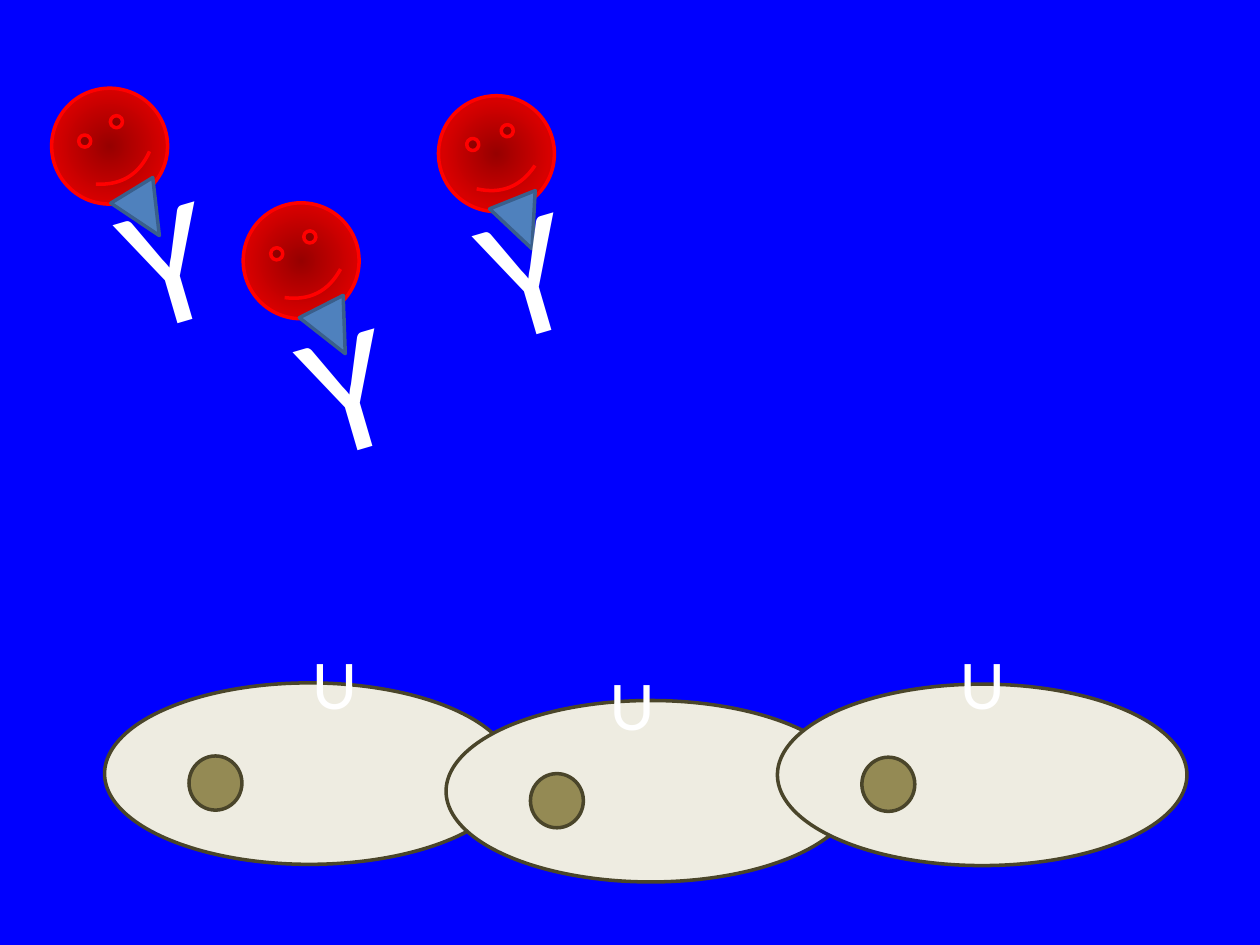
import pptx
import pptx.dml.color
import pptx.enum.shapes
import pptx.enum.text
import pptx.oxml
import pptx.oxml.ns
import pptx.util

Inches = pptx.util.Inches
RGBColor = pptx.dml.color.RGBColor
SHAPE = pptx.enum.shapes.MSO_SHAPE

BLUE = RGBColor(0x00, 0x00, 0xFF)
WHITE = RGBColor(0xFF, 0xFF, 0xFF)
CELL = RGBColor(0xEE, 0xEC, 0xE1)
NUCLEUS = RGBColor(0x94, 0x8A, 0x54)
CELL_EDGE = RGBColor(0x4A, 0x45, 0x2A)
RED = RGBColor(0xFF, 0x00, 0x00)
SPIKE = RGBColor(0x4F, 0x81, 0xBD)
SPIKE_EDGE = RGBColor(0x3A, 0x5F, 0x8C)
FACE_STOPS = ((0, RGBColor(0x97, 0x00, 0x00)), (50, RGBColor(0xD7, 0x00, 0x00)), (100, RED))

CELLS = ((0.83, 5.42), (3.54, 5.56), (6.17, 5.43))
RECEPTORS = ((2.38, 5.03), (4.74, 5.19), (7.52, 5.03))
# Face position, face angle, spike position, antibody position
VIRUSES = (
    ((0.41, 0.70), 328.6, (0.96, 1.48), (0.89, 1.18)),
    ((3.48, 0.76), 338.2, (3.95, 1.57), (3.74, 1.27)),
    ((1.93, 1.61), 333.0, (2.45, 2.41), (2.32, 2.19)),
)
ANTIBODY_ANGLE = 343.7


def add_figure(group, kind, position, size, fill, edge, angle=0):
    figure = group.shapes.add_shape(kind, *map(Inches, position + size))
    figure.shadow.inherit = False
    figure.rotation = angle
    figure.fill.solid()
    figure.fill.fore_color.rgb = fill
    figure.line.color.rgb = edge
    figure.line.width = pptx.util.Pt(2)
    return figure


def add_letter(group, letter, position, height, points, angle=0):
    box = group.shapes.add_textbox(*map(Inches, position + (0.54, height)))
    box.rotation = angle
    frame = box.text_frame
    frame.word_wrap = True
    frame.auto_size = pptx.enum.text.MSO_AUTO_SIZE.SHAPE_TO_FIT_TEXT
    frame.text = letter
    font = frame.paragraphs[0].runs[0].font
    font.name = "Calibri"
    font.size = pptx.util.Pt(points)
    font.color.rgb = WHITE


def set_radial_fill(figure, stops):
    """Replace the solid fill by a gradient running out from the centre."""
    stop_xml = "".join(
        f'<a:gs pos="{percent * 1000}"><a:srgbClr val="{color}"/></a:gs>'
        for percent, color in stops
    )
    gradient = pptx.oxml.parse_xml(
        f'<a:gradFill {pptx.oxml.ns.nsdecls("a")} rotWithShape="1">'
        f"<a:gsLst>{stop_xml}</a:gsLst>"
        '<a:path path="circle">'
        '<a:fillToRect l="50000" t="50000" r="50000" b="50000"/>'
        "</a:path></a:gradFill>"
    )
    properties = figure._element.spPr
    solid = properties.find(pptx.oxml.ns.qn("a:solidFill"))
    properties.replace(solid, gradient)


def add_cell(group, position):
    left, top = position
    add_figure(group, SHAPE.OVAL, position, (3.25, 1.44), CELL, CELL_EDGE)
    add_figure(group, SHAPE.OVAL, (left + 0.67, top + 0.58), (0.42, 0.43), NUCLEUS, CELL_EDGE)


def add_virus(page, face_position, angle, spike_position, antibody_position):
    """Add a face whose spike points into a Y-shaped antibody."""
    group = page.shapes.add_group_shape()
    face = add_figure(group, SHAPE.SMILEY_FACE, face_position, (0.92, 0.92), RED, RED, angle)
    set_radial_fill(face, FACE_STOPS)
    spike = add_figure(group, SHAPE.ISOSCELES_TRIANGLE, spike_position, (0.39, 0.42),
                       SPIKE, SPIKE_EDGE, angle - 180)
    spike._element.spPr.xfrm.set("flipH", "1")
    add_letter(group, "Y", antibody_position, 1.78, 100, ANTIBODY_ANGLE)


def main():
    deck = pptx.Presentation()
    deck.slide_width = Inches(10)
    deck.slide_height = Inches(7.5)
    page = deck.slides.add_slide(deck.slide_layouts[6])
    page.background.fill.solid()
    page.background.fill.fore_color.rgb = BLUE

    tissue = page.shapes.add_group_shape()
    for position in CELLS:
        add_cell(tissue, position)
    for position in RECEPTORS:
        add_letter(tissue, "U", position, 0.77, 40)
    for virus in VIRUSES:
        add_virus(page, *virus)

    deck.save("out.pptx")


if __name__ == "__main__":
    main()
